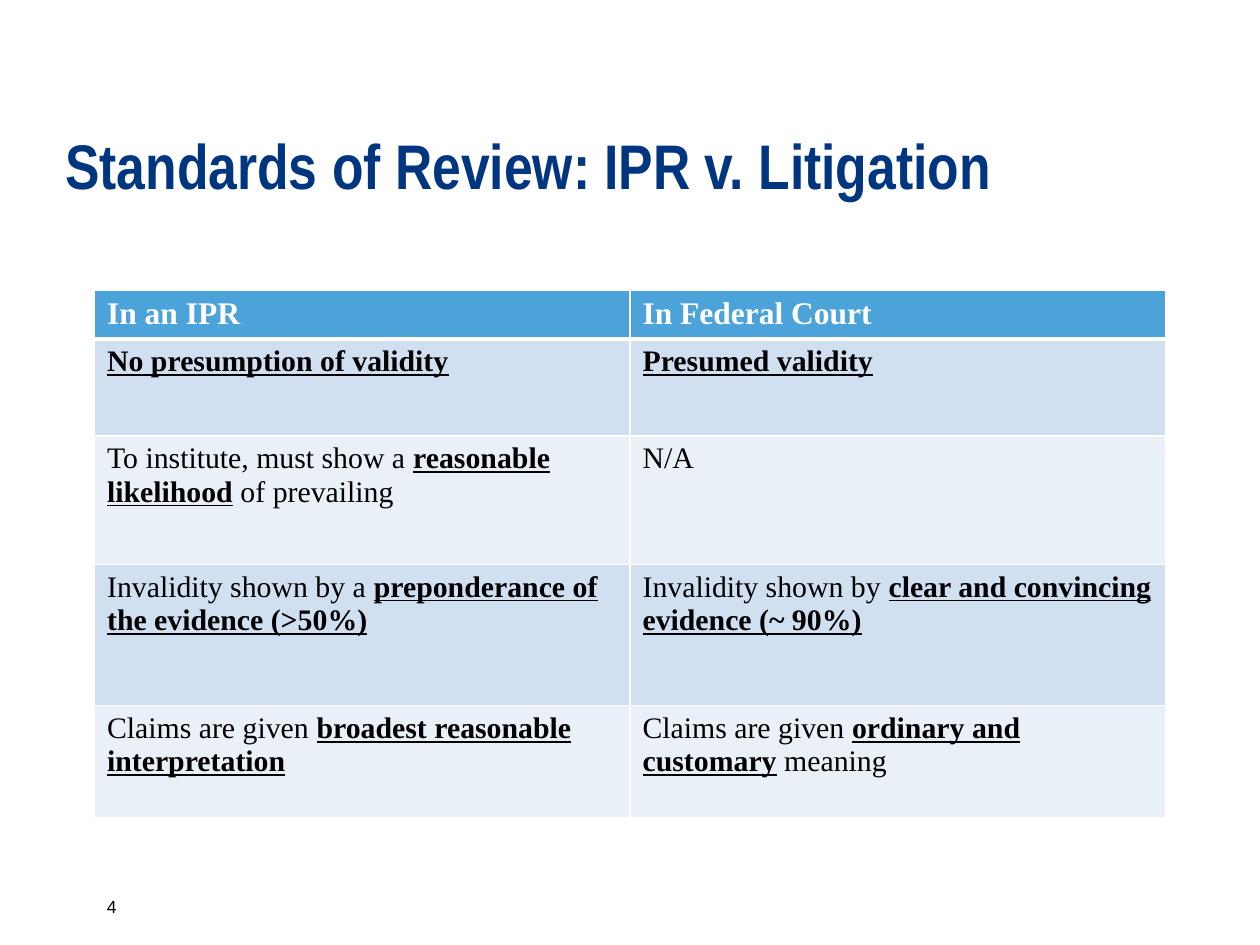
"""Build a slide that compares standards of review in an IPR and in court."""

from typing import NamedTuple

from lxml.etree import SubElement
from pptx import Presentation
from pptx.dml.color import RGBColor
from pptx.enum.text import MSO_ANCHOR
from pptx.oxml.ns import qn
from pptx.util import Inches, Pt

COLORS = {
    "title": "003580",
    "head": "4BA3D9",
    "dark": "D0E0F1",
    "light": "E9F0F8",
    "white": "FFFFFF",
    "black": "000000",
}


class Label(NamedTuple):
    """A single line of text with its place and font."""

    text: str
    left: float
    top: float
    width: float
    height: float
    font: str
    size: int
    color: str
    bold: bool = False


class Row(NamedTuple):
    """A table row; stars enclose the stressed words."""

    height: float
    left: str
    right: str


LABELS = [
    Label("Standards of Review: IPR v. Litigation", 0.42, 0.83, 9.58, 0.83,
          "Arial Narrow", 36, "title", True),
    Label("4", 0.75, 6.83, 2.08, 0.5, "Arial", 10, "black"),
]

ROWS = [
    Row(0.39, "In an IPR", "In Federal Court"),
    Row(0.77, "*No presumption of validity*", "*Presumed validity*"),
    Row(1.02, "To institute, must show a *reasonable likelihood* of prevailing",
        "N/A"),
    Row(1.12, "Invalidity shown by a *preponderance of the evidence (>50%)*",
        "Invalidity shown by *clear and convincing evidence (~ 90%)*"),
    Row(0.89, "Claims are given *broadest reasonable interpretation*",
        "Claims are given *ordinary and customary* meaning"),
]


def style(font, name: str, size: int, color: str, bold: bool) -> None:
    """Set the face, size, colour and weight of a font."""
    font.name = name
    font.size = Pt(size)
    font.bold = bold
    font.color.rgb = RGBColor.from_string(COLORS[color])


def add_label(slide, label: Label) -> None:
    """Add a bottom-anchored text box."""
    box = slide.shapes.add_textbox(Inches(label.left), Inches(label.top),
                                   Inches(label.width), Inches(label.height))
    frame = box.text_frame
    frame.word_wrap = True
    frame.vertical_anchor = MSO_ANCHOR.BOTTOM
    frame.text = label.text
    line = frame.paragraphs[0]
    line.line_spacing = 0.9 if label.bold else 1.0
    style(line.runs[0].font, label.font, label.size, label.color, label.bold)


def add_edges(cell, top: int, bottom: int) -> None:
    """Draw white borders of the given point widths round a cell."""
    props = cell._tc.get_or_add_tcPr()
    for side, width in {"L": 1, "R": 1, "T": top, "B": bottom}.items():
        edge = SubElement(props, qn(f"a:ln{side}"), w=str(Pt(width)))
        fill = SubElement(edge, qn("a:solidFill"))
        SubElement(fill, qn("a:srgbClr"), val=COLORS["white"])


def fill_cell(cell, text: str, index: int) -> None:
    """Write and style one cell according to its row."""
    head = index == 0
    add_edges(cell, 3 if index == 1 else 1, 3 if head else 1)
    shade = "head" if head else "dark" if index % 2 else "light"
    cell.fill.solid()
    cell.fill.fore_color.rgb = RGBColor.from_string(COLORS[shade])
    line = cell.text_frame.paragraphs[0]
    for place, part in enumerate(text.split("*")):
        if part:
            run = line.add_run()
            run.text = part
            stress = place % 2 == 1
            style(run.font, "Times New Roman", 18 if head else 17,
                  "white" if head else "black", head or stress)
            run.font.underline = stress


def add_grid(slide, rows: list[Row]) -> None:
    """Add the comparison table."""
    total = sum(row.height for row in rows)
    table = slide.shapes.add_table(len(rows), 2, Inches(0.75), Inches(2.3),
                                   Inches(8.5), Inches(total)).table
    for index, row in enumerate(rows):
        table.rows[index].height = Inches(row.height)
        for col, text in enumerate((row.left, row.right)):
            fill_cell(table.cell(index, col), text, index)


def main() -> None:
    """Build and save the slide."""
    deck = Presentation()
    deck.slide_width = Inches(10)
    deck.slide_height = Inches(7.5)
    slide = deck.slides.add_slide(deck.slide_layouts[6])
    add_grid(slide, ROWS)
    for label in LABELS:
        add_label(slide, label)
    deck.save("out.pptx")


if __name__ == "__main__":
    main()
